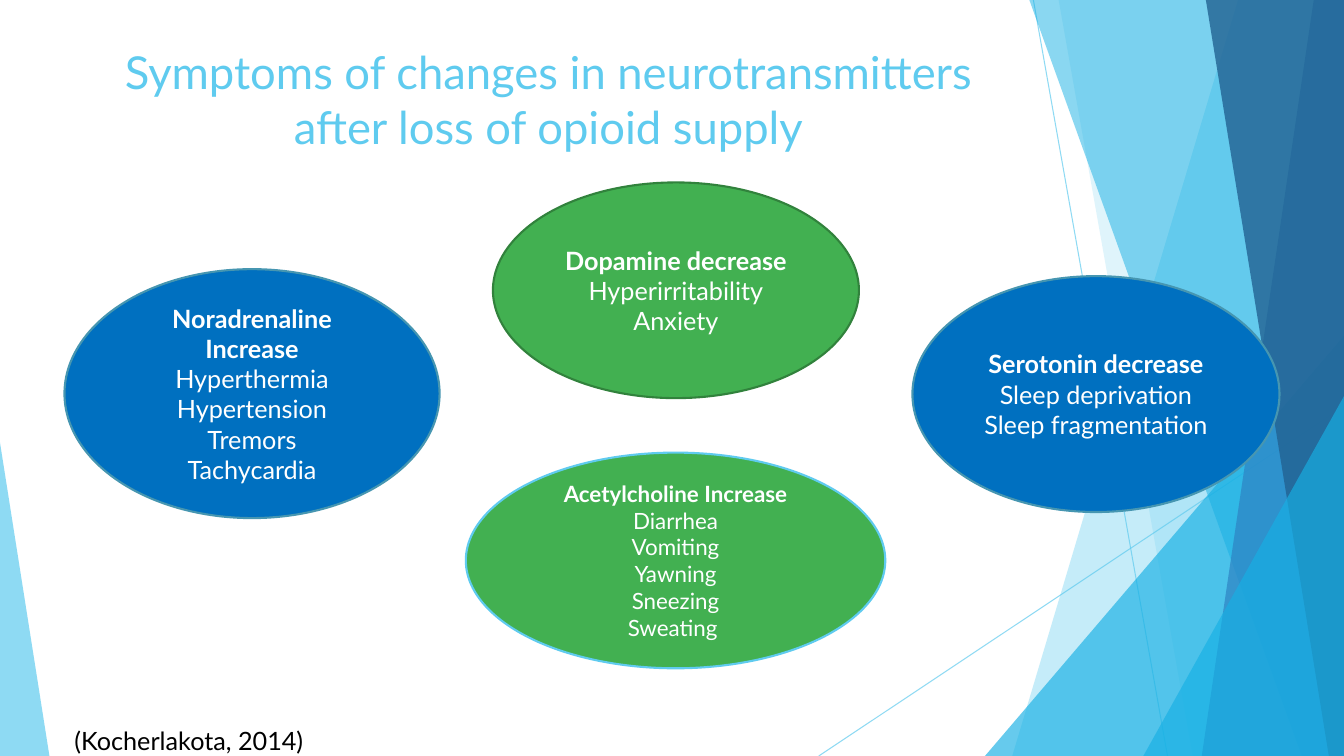
from dataclasses import dataclass

from lxml import etree
from pptx import Presentation
from pptx import util as u
from pptx.dml.color import RGBColor
from pptx.enum import shapes, text
from pptx.oxml.ns import qn


@dataclass(frozen=True)
class Theme:
    font: str = "Lato"
    sky: str = "5FCBEF"
    cyan: str = "17B0E4"
    blue: str = "2E83C3"
    navy: str = "226292"
    deep_blue: str = "0070C0"
    deep_blue_edge: str = "4696B1"
    green: str = "42B051"
    green_edge: str = "31823C"
    white: str = "FFFFFF"
    black: str = "000000"
    title_size: float = 32.4
    body_size: float = 18
    small_size: float = 16


THEME = Theme()
WIDTH, HEIGHT = u.Inches(13.33), u.Inches(7.5)


def across(percent):
    return round(WIDTH * percent / 100)


def down(percent):
    return round(HEIGHT * percent / 100)


def box(left, top, width, height):
    """Turn percentages of the slide into a position and size."""
    return across(left), down(top), across(width), down(height)


def set_color(fill, color, opacity=100):
    fill.solid()
    fill.fore_color.rgb = RGBColor.from_string(color)
    if opacity < 100:
        color_element = fill._xPr.find(qn("a:solidFill"))[0]
        etree.SubElement(color_element, qn("a:alpha"), val=str(opacity * 1000))


def write(frame, lines, size=THEME.body_size, color=THEME.white, bold_lines=0,
          align=text.PP_ALIGN.CENTER, anchor=text.MSO_ANCHOR.MIDDLE):
    """Write one paragraph per line; the first bold_lines are bold."""
    frame.word_wrap = True
    frame.auto_size = text.MSO_AUTO_SIZE.NONE
    frame.vertical_anchor = anchor
    for index, line in enumerate(lines):
        paragraph = frame.paragraphs[0] if index == 0 else frame.add_paragraph()
        paragraph.alignment = align
        run = paragraph.add_run()
        run.text = line
        run.font.name = THEME.font
        run.font.size = u.Pt(size)
        run.font.bold = index < bold_lines
        run.font.color.rgb = RGBColor.from_string(color)


def add_ray(slide, start, end):
    ray = slide.shapes.add_connector(
        shapes.MSO_CONNECTOR.STRAIGHT,
        across(start[0]), down(start[1]), across(end[0]), down(end[1]))
    ray.line.width = u.Pt(0.75)
    set_color(ray.line.fill, THEME.sky, 70)
    etree.SubElement(ray._element.spPr, qn("a:effectLst"))


def finish_facet(shape, color, opacity):
    shape.shadow.inherit = False
    set_color(shape.fill, color, opacity)
    shape.line.fill.background()


def add_band(slide, top_x, bottom_x, color, opacity):
    """Fill from a slanted left edge to the right side of the slide."""
    builder = slide.shapes.build_freeform(across(top_x), 0)
    builder.add_line_segments(
        [(WIDTH, 0), (WIDTH, HEIGHT), (across(bottom_x), HEIGHT)])
    finish_facet(builder.convert_to_shape(), color, opacity)


def add_corner(slide, left, top, width, apex, color, opacity):
    """Stand a right triangle on the bottom edge of the slide."""
    corner = slide.shapes.add_shape(
        shapes.MSO_SHAPE.ISOSCELES_TRIANGLE, *box(left, top, width, 100 - top))
    corner.adjustments[0] = apex
    finish_facet(corner, color, opacity)


def add_backdrop(slide):
    add_ray(slide, (76.89, 0), (86.87, 100))
    add_ray(slide, (100, 53.73), (60.92, 100))
    add_band(slide, 92.12, 75.32, THEME.sky, 36)
    add_band(slide, 78.77, 88.75, THEME.sky, 20)
    add_corner(slide, 73.29, 44.4, 26.71, 1, THEME.cyan, 66)
    add_band(slide, 76.59, 96.85, THEME.cyan, 50)
    add_band(slide, 97.75, 89.42, THEME.blue, 70)
    add_band(slide, 89.72, 98.87, THEME.navy, 80)
    add_corner(slide, 85.07, 52.4, 14.93, 1, THEME.cyan, 66)
    add_corner(slide, 0, 58.53, 3.68, 0, THEME.sky, 70)


def add_title(slide, title_text):
    title = slide.shapes.title
    title.left, title.top, title.width, title.height = box(5.55, 5.2, 70.52, 23.07)
    write(title.text_frame, [title_text], size=THEME.title_size,
          color=THEME.sky, anchor=text.MSO_ANCHOR.TOP)
    slide.shapes._spTree.append(title._element)  # in front of the backdrop


def add_citation(slide, citation):
    textbox = slide.shapes.add_textbox(*box(4.8, 95.33, 46.59, 9.47))
    write(textbox.text_frame, [citation], color=THEME.black,
          align=text.PP_ALIGN.LEFT, anchor=text.MSO_ANCHOR.TOP)


def add_symptoms(slide, place, fill, edge, heading, symptoms, size=THEME.body_size):
    ellipse = slide.shapes.add_shape(shapes.MSO_SHAPE.OVAL, *box(*place))
    ellipse.shadow.inherit = False
    set_color(ellipse.fill, fill)
    set_color(ellipse.line.fill, edge)
    ellipse.line.width = u.Pt(1.5)
    write(ellipse.text_frame, heading + symptoms, size=size, bold_lines=len(heading))


def main():
    presentation = Presentation()
    presentation.slide_width, presentation.slide_height = WIDTH, HEIGHT
    slide = presentation.slides.add_slide(presentation.slide_layouts[5])
    add_backdrop(slide)
    add_title(slide, "Symptoms of changes in neurotransmitters "
                     "after loss of opioid supply")
    add_citation(slide, "(Kocherlakota, 2014)")
    add_symptoms(slide, (4.8, 35.6, 27.91, 32.93),
                 THEME.deep_blue, THEME.deep_blue_edge,
                 ["Noradrenaline", "Increase"],
                 ["Hyperthermia", "Hypertension", "Tremors", "Tachycardia"])
    add_symptoms(slide, (36.68, 24.13, 27.23, 28.53),
                 THEME.green, THEME.green_edge,
                 ["Dopamine decrease"], ["Hyperirritability", "Anxiety"])
    add_symptoms(slide, (34.66, 59.87, 31.21, 28.53),
                 THEME.green, THEME.sky, ["Acetylcholine Increase"],
                 ["Diarrhea", "Vomiting", "Yawning", "Sneezing", "Sweating "],
                 size=THEME.small_size)
    add_symptoms(slide, (67.89, 36.53, 27.31, 31.2),
                 THEME.deep_blue, THEME.deep_blue_edge,
                 ["Serotonin decrease"],
                 ["Sleep deprivation", "Sleep fragmentation"])
    presentation.save("out.pptx")


if __name__ == "__main__":
    main()
